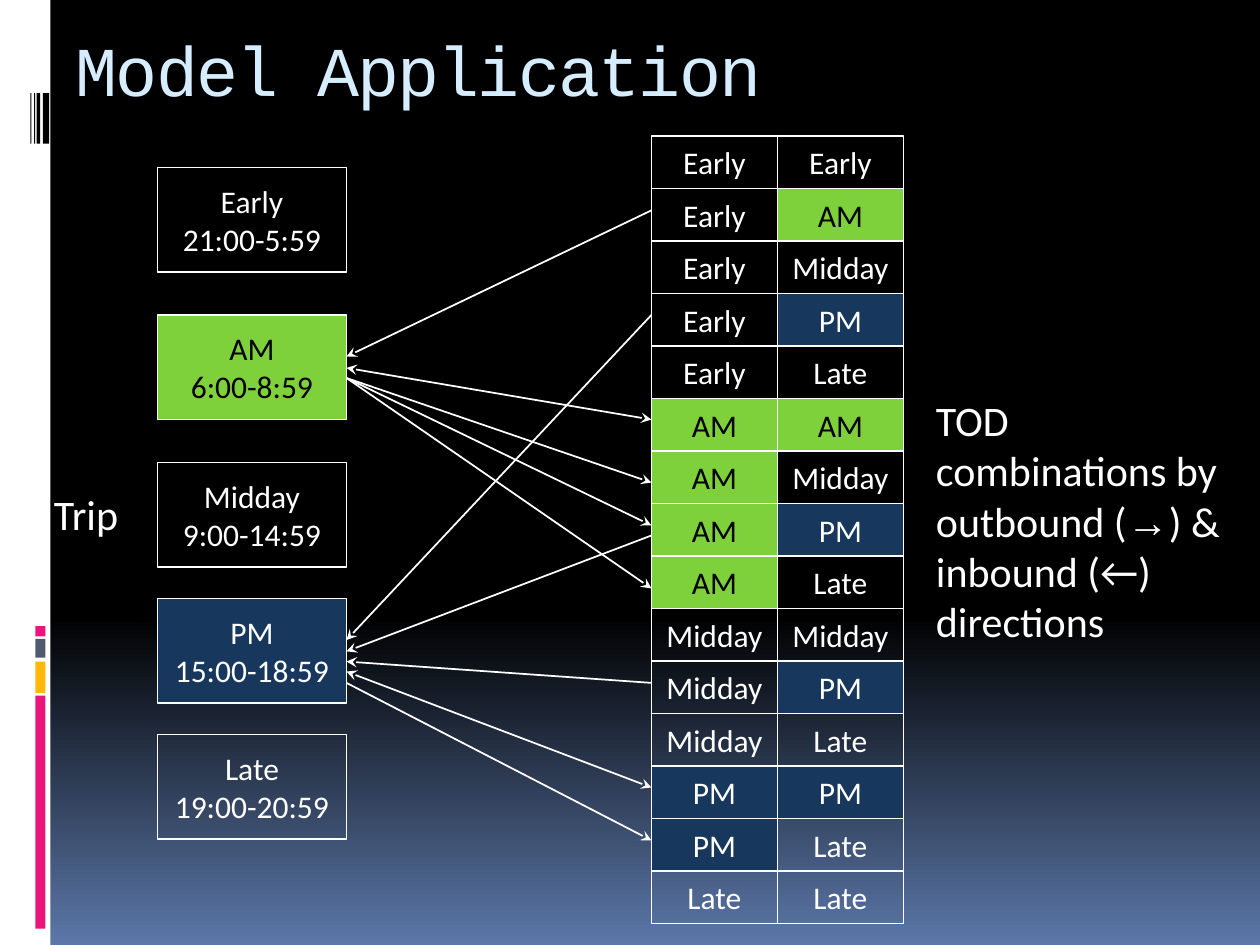
import itertools

import pptx
import pptx.dml.color
import pptx.enum.shapes
import pptx.enum.text
import pptx.oxml.ns
import pptx.util
from lxml import etree

Inches = pptx.util.Inches
Pt = pptx.util.Pt

COLORS = {
    "black": "000000", "white": "FFFFFF", "title": "D6ECFF",
    "sky": "5B77A8", "green": "7FD13B", "navy": "17375D",
    "pink": "EA157A", "yellow": "FEB80A", "slate": "4E5B6F",
}

# name: (hours, top of the trip box)
PERIODS = {
    "Early": ("21:00-5:59", 1.33),
    "AM": ("6:00-8:59", 2.5),
    "Midday": ("9:00-14:59", 3.67),
    "PM": ("15:00-18:59", 4.75),
    "Late": ("19:00-20:59", 5.83),
}
PERIOD_FILLS = {"AM": "green", "PM": "navy"}

TRIP_LEFT, TRIP_WIDTH, TRIP_HEIGHT = 1.25, 1.5, 0.83
GRID_LEFT, GRID_TOP, CELL_WIDTH, CELL_HEIGHT = 5.17, 1.08, 1, 5 / 12

# left, top, width, height, color
SIDEBAR = [
    (0, 0, 0.4, 7.5, "white"),
    (0.28, 5.52, 0.08, 1.85, "pink"),
    (0.28, 5.25, 0.08, 0.25, "yellow"),
    (0.28, 5.07, 0.08, 0.15, "slate"),
    (0.28, 4.97, 0.08, 0.08, "pink"),
    (0.34, 0.74, 0.05, 0.4, "black"),
    (0.29, 0.74, 0.03, 0.4, "black"),
    (0.27, 0.74, 0.01, 0.4, "black"),
    (0.24, 0.74, 0.01, 0.4, "black"),
]

# y at the trip box, y at the grid, ends with an arrowhead
INBOUND, OUTBOUND, BOTH = ("headEnd",), ("tailEnd",), ("headEnd", "tailEnd")
ARROWS = [
    (2.83, 1.67, INBOUND),
    (2.92, 3.33, BOTH),
    (3, 3.83, OUTBOUND),
    (3, 4.17, OUTBOUND),
    (3, 4.67, OUTBOUND),
    (5.08, 2.5, INBOUND),
    (5.17, 4.25, INBOUND),
    (5.25, 5.42, INBOUND),
    (5.33, 6.25, BOTH),
    (5.42, 6.67, OUTBOUND),
]


def rgb(name):
    return pptx.dml.color.RGBColor.from_string(COLORS[name])


def set_attributes(target, values):
    for name, value in values.items():
        setattr(target, name, value)


def add_run(paragraph, text, size, color="white", font="Calibri"):
    run = paragraph.add_run()
    run.text = text
    set_attributes(run.font, {"size": Pt(size), "name": font})
    run.font.color.rgb = rgb(color)
    return run


def set_background(slide):
    fill = slide.background.fill
    fill.gradient()
    fill.gradient_angle = 270
    stops = zip(fill.gradient_stops, [(0.65, "black"), (1, "sky")])
    for stop, (position, color) in stops:
        stop.position = position
        stop.color.rgb = rgb(color)


def add_title(slide, text):
    title = slide.shapes.title
    set_attributes(title, {"left": Inches(0.5), "top": Inches(0.08),
                           "width": Inches(9), "height": Inches(0.92)})
    set_attributes(title.text_frame, {
        "auto_size": pptx.enum.text.MSO_AUTO_SIZE.NONE,
        "vertical_anchor": pptx.enum.text.MSO_ANCHOR.MIDDLE,
    })
    paragraph = title.text_frame.paragraphs[0]
    paragraph.alignment = pptx.enum.text.PP_ALIGN.LEFT
    run = add_run(paragraph, text, 40, "title", "Courier New")
    run.font._element.set("spc", "-100")


def add_rectangle(slide, left, top, width, height, fill=None):
    shape = slide.shapes.add_shape(
        pptx.enum.shapes.MSO_SHAPE.RECTANGLE,
        Inches(left), Inches(top), Inches(width), Inches(height))
    shape.shadow.inherit = False
    shape.line.fill.background()
    if fill:
        shape.fill.solid()
        shape.fill.fore_color.rgb = rgb(fill)
    else:
        shape.fill.background()
    return shape


def add_period_box(slide, left, top, width, height, period, *details):
    """Add an outlined box in the period's color, with one line per text."""
    shape = add_rectangle(slide, left, top, width, height,
                          PERIOD_FILLS.get(period))
    shape.line.color.rgb = rgb("white")
    shape.line.width = Pt(0.75)
    frame = shape.text_frame
    set_attributes(frame, {
        "word_wrap": False,
        "vertical_anchor": pptx.enum.text.MSO_ANCHOR.MIDDLE,
    })
    color = "black" if period == "AM" else "white"
    for index, text in enumerate((period, *details)):
        paragraph = frame.add_paragraph() if index else frame.paragraphs[0]
        paragraph.alignment = pptx.enum.text.PP_ALIGN.CENTER
        add_run(paragraph, text, 18, color)


def add_label(slide, left, top, width, height, runs, wrap):
    box = slide.shapes.add_textbox(
        Inches(left), Inches(top), Inches(width), Inches(height))
    set_attributes(box.text_frame, {
        "word_wrap": wrap,
        "auto_size": pptx.enum.text.MSO_AUTO_SIZE.SHAPE_TO_FIT_TEXT,
    })
    for text, font in runs:
        add_run(box.text_frame.paragraphs[0], text, 24, font=font)


def add_arrow(slide, trip_y, grid_y, ends):
    connector = slide.shapes.add_connector(
        pptx.enum.shapes.MSO_CONNECTOR.STRAIGHT,
        Inches(TRIP_LEFT + TRIP_WIDTH), Inches(trip_y),
        Inches(GRID_LEFT), Inches(grid_y))
    connector.line.color.rgb = rgb("white")
    connector.line.width = Pt(1)
    line = connector.line._get_or_add_ln()
    for end in ends:
        etree.SubElement(line, pptx.oxml.ns.qn(f"a:{end}"), type="stealth")
    etree.SubElement(connector._element.spPr, pptx.oxml.ns.qn("a:effectLst"))


def main():
    presentation = pptx.Presentation()
    presentation.slide_width = Inches(10)
    presentation.slide_height = Inches(7.5)
    slide = presentation.slides.add_slide(presentation.slide_layouts[5])

    set_background(slide)
    for bar in SIDEBAR:
        add_rectangle(slide, *bar)
    add_title(slide, "Model Application")

    add_label(slide, 0.33, 3.83, 0.78, 0.5, [("Trip", "Calibri")], False)
    add_label(slide, 7.33, 3.08, 2.67, 2.12, [
        ("TOD combinations by outbound (", "Calibri"),
        ("→", "Times New Roman"),
        (") & inbound (←) directions", "Calibri"),
    ], True)

    for period, (hours, top) in PERIODS.items():
        add_period_box(slide, TRIP_LEFT, top, TRIP_WIDTH, TRIP_HEIGHT,
                       period, hours)

    combinations = itertools.combinations_with_replacement(PERIODS, 2)
    for row, pair in enumerate(combinations):
        for column, period in enumerate(pair):
            add_period_box(slide, GRID_LEFT + column * CELL_WIDTH,
                           GRID_TOP + row * CELL_HEIGHT,
                           CELL_WIDTH, CELL_HEIGHT, period)

    for arrow in ARROWS:
        add_arrow(slide, *arrow)

    presentation.save("out.pptx")


if __name__ == "__main__":
    main()
